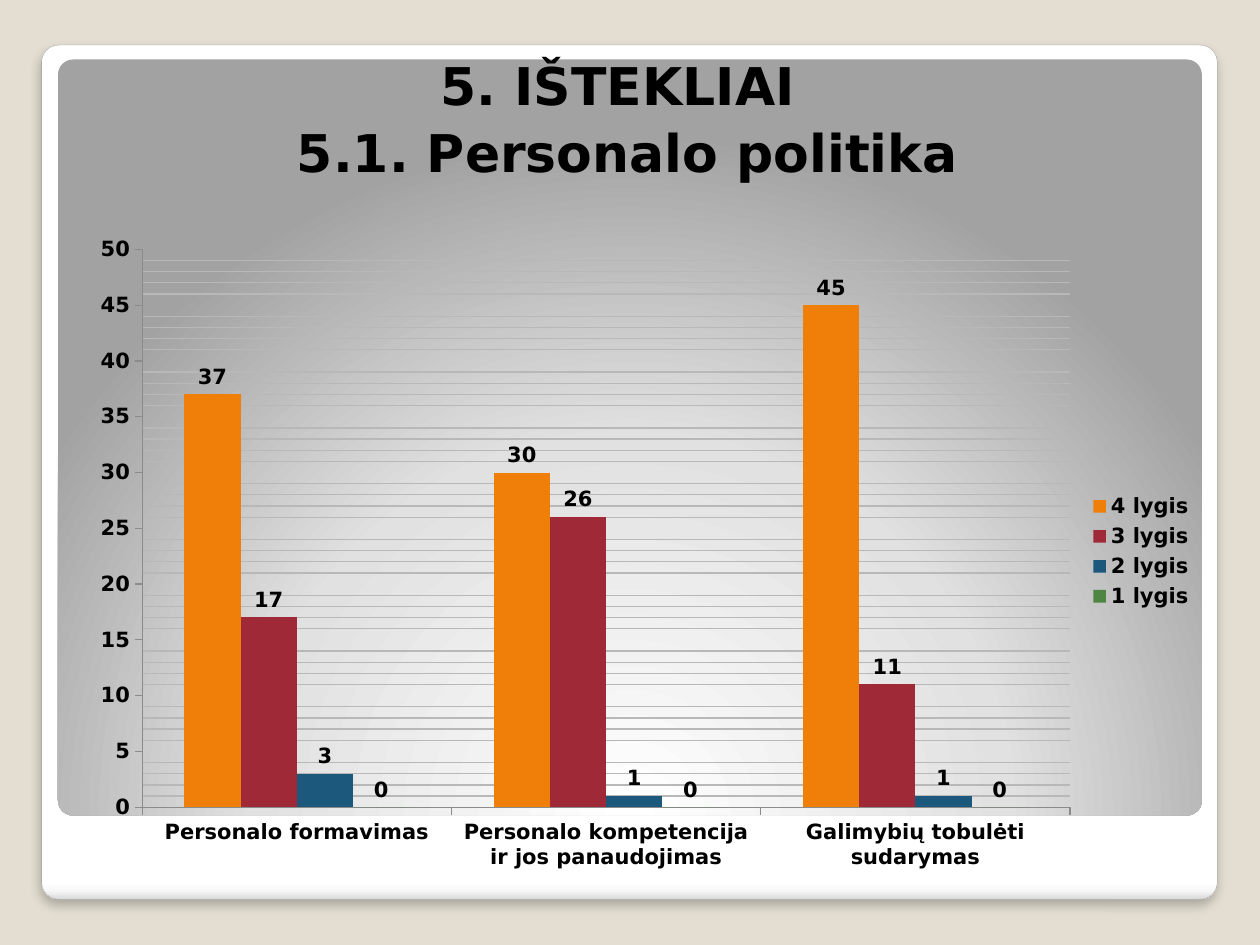
"""Builds a slide with a framed panel, a title and a clustered column chart."""
from pptx import Presentation
from pptx.chart.data import CategoryChartData
from pptx.dml.color import RGBColor
from pptx.enum.chart import XL_CHART_TYPE as ChartType, XL_LABEL_POSITION as LabelPos
from pptx.enum.chart import XL_LEGEND_POSITION as LegendPos, XL_TICK_MARK as Tick
from pptx.enum.shapes import MSO_SHAPE as Shape
from pptx.enum.text import MSO_ANCHOR as Anchor, MSO_AUTO_SIZE as AutoSize, PP_ALIGN as Align
from pptx.oxml import parse_xml
from pptx.oxml.ns import nsdecls, qn
from pptx.util import Cm, Pt

BEIGE = RGBColor(0xE3, 0xDE, 0xD1)
BLACK = RGBColor(0, 0, 0)
EDGE = RGBColor(0xA4, 0xA4, 0xA4)
AXIS = RGBColor(0x8B, 0x8B, 0x8B)
GRID = RGBColor(0xB8, 0xB8, 0xB8)
ORANGE = RGBColor(0xF0, 0x7F, 0x09)
RED = RGBColor(0x9F, 0x29, 0x36)
BLUE = RGBColor(0x1B, 0x58, 0x7C)
GREEN = RGBColor(0x4E, 0x85, 0x42)

FRAME_STOPS = [(0, "FFFFFF"), (98, "FFFFFF"), (99, "F7F7F7"), (100, "DADADA")]
PANEL_STOPS = [(0, "FFFFFF"), (55, "E1E1E1"), (100, "A2A2A2")]
DOWN = '<a:lin ang="5400000" scaled="0"/>'
GLOW = ('<a:path path="circle"><a:fillToRect l="50000" t="175000" '
        'r="50000" b="-75000"/></a:path>')
SHADOW = (f'<a:outerShdw {nsdecls("a")} blurRad="76200" dist="50800" dir="5400000" '
          'rotWithShape="0"><a:srgbClr val="000000"><a:alpha val="25000"/></a:srgbClr>'
          '</a:outerShdw>')

CATEGORIES = ["Personalo formavimas", "Personalo kompetencija ir jos panaudojimas",
              "Galimybių tobulėti sudarymas"]
SERIES = [("4 lygis", (37, 30, 45), ORANGE), ("3 lygis", (17, 26, 11), RED),
          ("2 lygis", (3, 1, 1), BLUE), ("1 lygis", (0, 0, 0), GREEN)]


def apply(obj, values):
    for name, value in values.items():
        setattr(obj, name, value)


class Deck:
    font = {"name": "DejaVu Sans", "bold": True}
    chart_font = {**font, "size": Pt(12)}

    def __init__(self):
        self.prs = Presentation()
        apply(self.prs, {"slide_width": Cm(25.4), "slide_height": Cm(19.05)})
        self.s = self.prs.slides.add_slide(self.prs.slide_layouts[5])
        fill = self.s.background.fill
        fill.solid()
        fill.fore_color.rgb = BEIGE

    def set_font(self, font, values, color=BLACK):
        apply(font, values)
        font.color.rgb = color

    def panel(self, x, y, w, h, stops, direction, edge=None):
        sp = self.s.shapes.add_shape(Shape.ROUNDED_RECTANGLE, Cm(x), Cm(y), Cm(w), Cm(h))
        sp.adjustments[0] = 0.02
        sp.shadow.inherit = False
        sp.fill.background()
        if edge:
            sp.line.color.rgb = edge
            sp.line.width = Pt(0.16)
            sp.element.spPr.find(qn("a:effectLst")).append(parse_xml(SHADOW))
        else:
            sp.line.fill.background()
        gs = "".join(f'<a:gs pos="{pos * 1000}"><a:srgbClr val="{color}"/></a:gs>'
                     for pos, color in stops)
        grad = parse_xml(f'<a:gradFill {nsdecls("a")} rotWithShape="1">'
                         f'<a:gsLst>{gs}</a:gsLst>{direction}</a:gradFill>')
        sp.element.spPr.replace(sp.element.spPr.find(qn("a:noFill")), grad)
        self.s.shapes.title.element.addprevious(sp.element)

    def title(self, x, y, w, h, first, second):
        sp = self.s.shapes.title
        apply(sp, {"left": Cm(x), "top": Cm(y), "width": Cm(w), "height": Cm(h)})
        tf = sp.text_frame
        apply(tf, {"word_wrap": True, "vertical_anchor": Anchor.BOTTOM,
                   "auto_size": AutoSize.NONE})
        p = tf.paragraphs[0]
        p.alignment = Align.CENTER
        for text, size in ((first, 29.7), (None, 0), (" ", 32.4), (second, 29.7)):
            if text is None:
                p.add_line_break()
                continue
            r = p.add_run()
            r.text = text
            self.set_font(r.font, {**self.font, "size": Pt(size)})

    def column_chart(self, x, y, w, h, categories, series, plot_area):
        data = CategoryChartData()
        data.categories = categories
        for name, values, _ in series:
            data.add_series(name, values)
        chart = self.s.shapes.add_chart(ChartType.COLUMN_CLUSTERED, Cm(x), Cm(y),
                                        Cm(w), Cm(h), data).chart
        chart.has_title = False
        self.set_font(chart.font, self.chart_font)
        chart.has_legend = True
        apply(chart.legend, {"position": LegendPos.RIGHT, "include_in_layout": False})
        self.set_font(chart.legend.font, self.chart_font)
        plot = chart.plots[0]
        apply(plot, {"gap_width": 150, "overlap": 0, "vary_by_categories": False})
        for ser, (_, _, color) in zip(plot.series, series):
            ser.format.fill.solid()
            ser.format.fill.fore_color.rgb = color
            labels = ser.data_labels
            apply(labels, {"show_value": True, "position": LabelPos.OUTSIDE_END})
            self.set_font(labels.font, self.chart_font)
        value = chart.value_axis
        for axis in (chart.category_axis, value):
            apply(axis, {"major_tick_mark": Tick.OUTSIDE, "minor_tick_mark": Tick.NONE,
                         "has_major_gridlines": False})
            axis.format.line.color.rgb = AXIS
            self.set_font(axis.tick_labels.font, self.chart_font)
        apply(value, {"minimum_scale": 0, "maximum_scale": 50, "major_unit": 5,
                      "minor_unit": 1, "has_minor_gridlines": True})
        self.color_gridlines(chart)
        self.place_plot(chart, plot_area)

    def color_gridlines(self, chart):
        grid = chart.element.find(".//" + qn("c:minorGridlines"))
        grid.append(parse_xml(f'<c:spPr {nsdecls("c", "a")}><a:ln><a:solidFill>'
                              f'<a:srgbClr val="{GRID}"/></a:solidFill></a:ln></c:spPr>'))

    def place_plot(self, chart, plot_area):
        modes = '<c:xMode val="edge"/><c:yMode val="edge"/>'
        sizes = "".join(f'<c:{k} val="{v}"/>' for k, v in zip("xywh", plot_area))
        layout = parse_xml(f'<c:layout {nsdecls("c")}><c:manualLayout>'
                           f'<c:layoutTarget val="inner"/>{modes}{sizes}'
                           '</c:manualLayout></c:layout>')
        area = chart.element.find(".//" + qn("c:plotArea"))
        old = area.find(qn("c:layout"))
        if old is not None:
            area.remove(old)
        area.insert(0, layout)


def main():
    deck = Deck()
    deck.panel(0.84, 0.91, 23.7, 17.22, FRAME_STOPS, DOWN, EDGE)
    deck.panel(1.17, 1.2, 23.06, 15.24, PANEL_STOPS, GLOW)
    deck.title(1.09, 0.91, 22.73, 2.92, "5. IŠTEKLIAI", "5.1. Personalo politika")
    deck.column_chart(1.5, 4.5, 22.81, 13.23, CATEGORIES, SERIES,
                      (0.06, 0.04, 0.82, 0.85))
    deck.prs.save("out.pptx")


if __name__ == "__main__":
    main()
